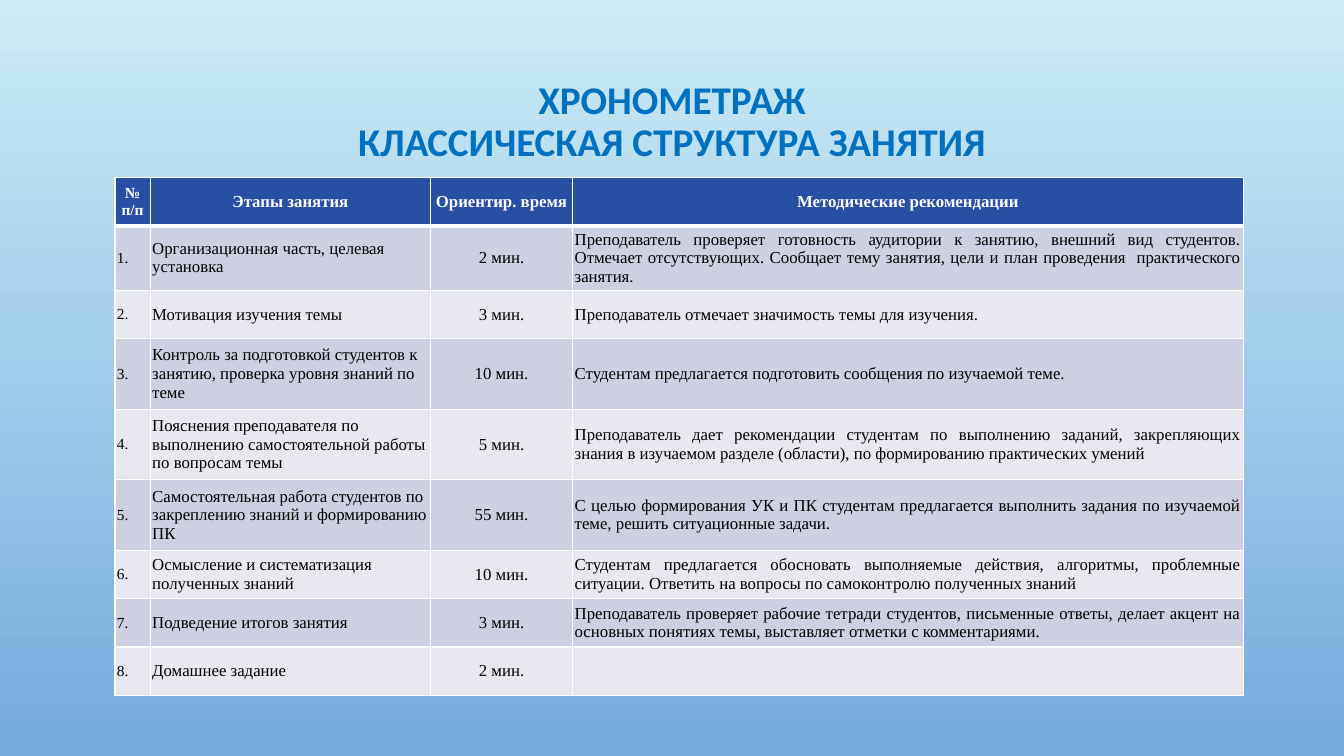
from lxml import etree
from pptx import Presentation
from pptx.dml.color import RGBColor
from pptx.enum.text import MSO_ANCHOR, PP_ALIGN
from pptx.oxml.ns import qn
from pptx.util import Inches, Pt

LEFT, CENTER, JUSTIFY = PP_ALIGN.LEFT, PP_ALIGN.CENTER, PP_ALIGN.JUSTIFY
MIDDLE = MSO_ANCHOR.MIDDLE

HEADER = ["№ п/п", "Этапы занятия", "Ориентир. время", "Методические рекомендации"]
STAGES = [
    ("Организационная часть, целевая установка", 2,
     "Преподаватель проверяет готовность аудитории к занятию, внешний вид студентов. "
     "Отмечает отсутствующих. Сообщает тему занятия, цели и план проведения  практического занятия."),
    ("Мотивация изучения темы", 3,
     "Преподаватель отмечает значимость темы для изучения."),
    ("Контроль за подготовкой студентов к занятию, проверка уровня знаний по теме", 10,
     "Студентам предлагается подготовить сообщения по изучаемой теме."),
    ("Пояснения преподавателя по выполнению самостоятельной работы по вопросам темы", 5,
     "Преподаватель дает рекомендации студентам по выполнению заданий, закрепляющих знания "
     "в изучаемом разделе (области), по формированию практических умений"),
    ("Самостоятельная работа студентов по закреплению знаний и формированию ПК", 55,
     "С целью формирования УК и ПК студентам предлагается выполнить задания по изучаемой теме, "
     "решить ситуационные задачи."),
    ("Осмысление и систематизация полученных знаний", 10,
     "Студентам предлагается обосновать выполняемые действия, алгоритмы, проблемные ситуации. "
     "Ответить на вопросы по самоконтролю полученных знаний"),
    ("Подведение итогов занятия", 3,
     "Преподаватель проверяет рабочие тетради студентов, письменные ответы, делает акцент на "
     "основных понятиях темы, выставляет отметки с комментариями."),
    ("Домашнее задание", 2, ""),
]
COLS = [0.35, 2.78, 1.41, 6.65]
ROWS = [0.48, 0.6, 0.48] + [0.7] * 3 + [0.48] * 3
ALIGNS = [LEFT, LEFT, CENTER, JUSTIFY]
SIZES = [11, 12, 12, 12]


def add_run(p, text, font, size, color, bold):
    r = p.add_run()
    r.text = text
    r.font.name, r.font.size, r.font.bold = font, Pt(size), bold
    r.font.color.rgb = RGBColor.from_string(color)


def add_border(cell, side, width):
    ln = etree.SubElement(cell._tc.get_or_add_tcPr(), qn(f"a:{side}"), w=str(Pt(width)))
    fill = etree.SubElement(ln, qn("a:solidFill"))
    etree.SubElement(fill, qn("a:srgbClr"), val="FFFFFF")


prs = Presentation()
prs.slide_width, prs.slide_height = Inches(13.33), Inches(7.5)
s = prs.slides.add_slide(prs.slide_layouts[6])
bg = s.background.fill
bg.gradient()
bg.gradient_angle = 270
for stop, color in zip(bg.gradient_stops, ["CBECF5", "73ABDD"]):
    stop.color.rgb = RGBColor.from_string(color)

title = s.shapes.add_textbox(Inches(1), Inches(0.68), Inches(11.33), Inches(1.08))
tf = title.text_frame
tf.word_wrap = True
tf.vertical_anchor = MIDDLE
p = tf.paragraphs[0]
p.alignment = CENTER
p.line_spacing = 0.9
add_run(p, "ХРОНОМЕТРАЖ", "Calibri", 28, "0070C0", True)
p.add_line_break()
add_run(p, "КЛАССИЧЕСКАЯ СТРУКТУРА ЗАНЯТИЯ", "Calibri", 28, "0070C0", True)

table = s.shapes.add_table(len(ROWS), len(COLS), Inches(1.14), Inches(1.76),
                           Inches(sum(COLS)), Inches(sum(ROWS))).table
for col, width in zip(table.columns, COLS):
    col.width = Inches(width)
for row, height in zip(table.rows, ROWS):
    row.height = Inches(height)

rows = [HEADER] + [(f"{n}.", stage, f"{minutes} мин.", advice)
                   for n, (stage, minutes, advice) in enumerate(STAGES, 1)]
for i, texts in enumerate(rows):
    head = i == 0
    band = "274FA4" if head else "CDD0E0" if i % 2 else "E8E9F0"
    for j, text in enumerate(texts):
        cell = table.cell(i, j)
        cell.vertical_anchor = MIDDLE
        cell.margin_left = cell.margin_right = Inches(0.02)
        cell.margin_top = cell.margin_bottom = Inches(0.02)
        for side in ("lnL", "lnR", "lnT", "lnB"):
            thick = head and side == "lnB" or i == 1 and side == "lnT"
            add_border(cell, side, 3 if thick else 1)
        cell.fill.solid()
        cell.fill.fore_color.rgb = RGBColor.from_string(band)
        p = cell.text_frame.paragraphs[0]
        p.alignment = CENTER if head else ALIGNS[j]
        if text:
            add_run(p, text, "Times New Roman", SIZES[j], "FFFFFF" if head else "000000", head)

prs.save("out.pptx")
